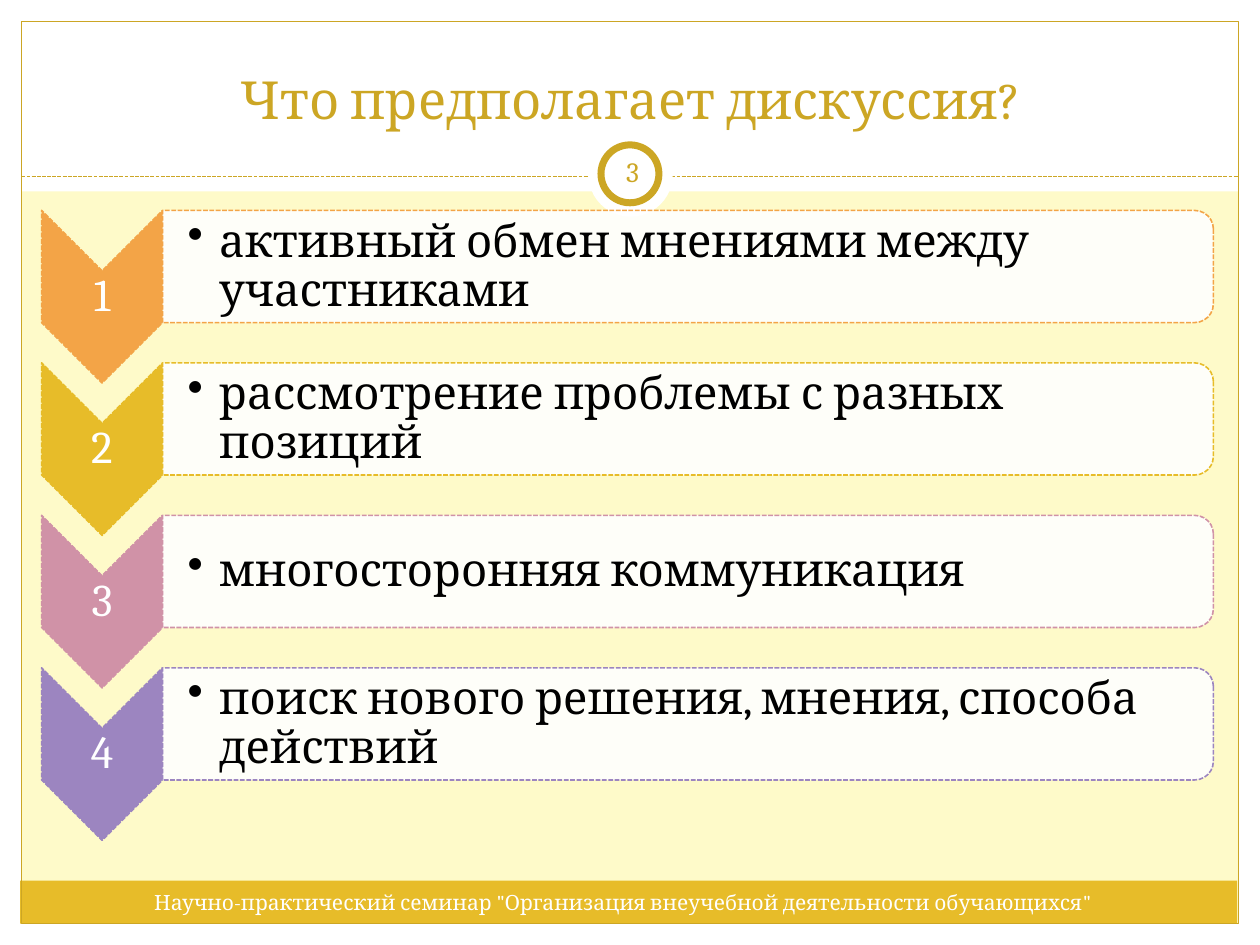
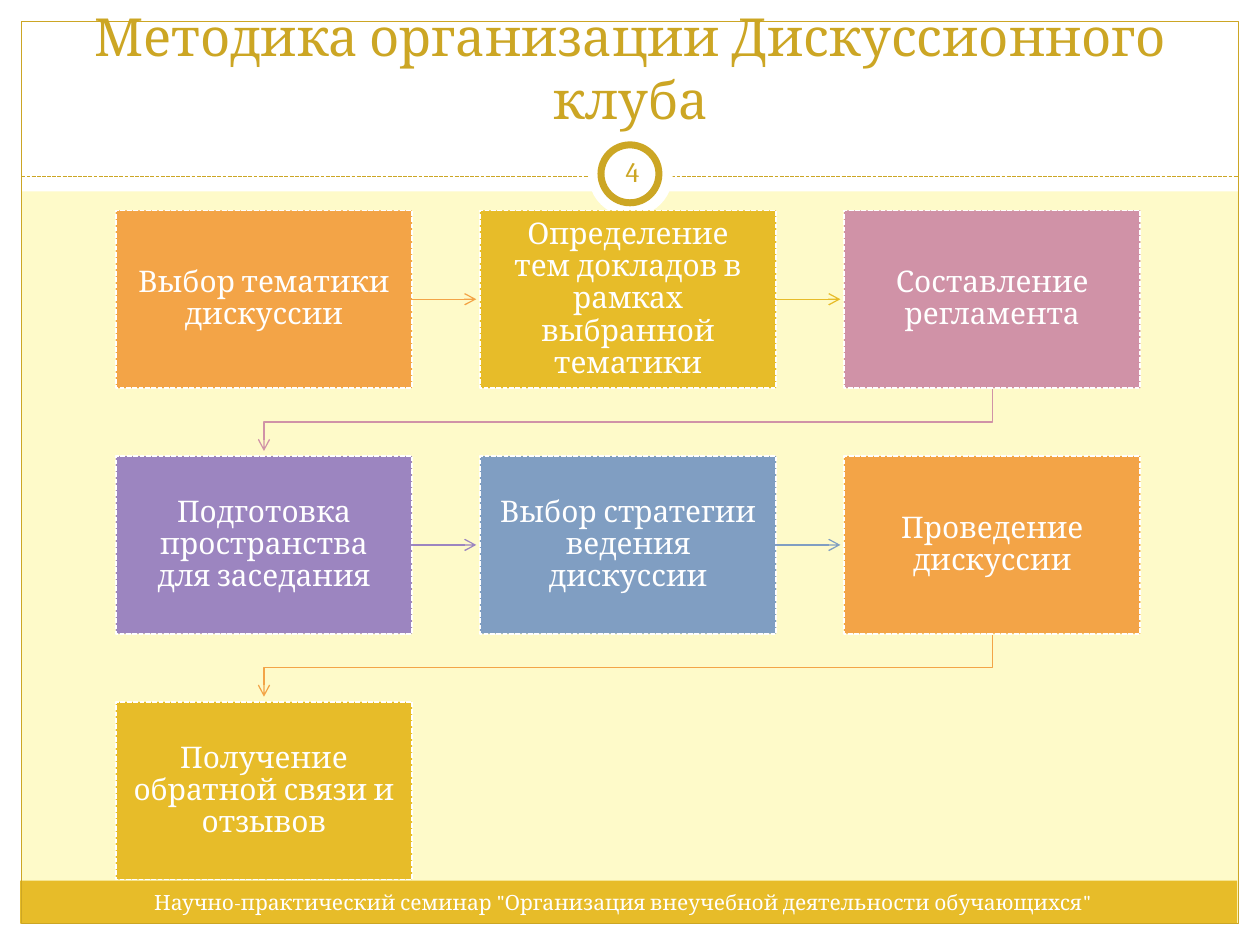
import pptx
import pptx.dml.color
import pptx.enum.dml
import pptx.enum.shapes
import pptx.enum.text
import pptx.oxml
import pptx.oxml.ns
import pptx.util

Inches = pptx.util.Inches
Pt = pptx.util.Pt
RGBColor = pptx.dml.color.RGBColor
Preset = pptx.enum.shapes.MSO_SHAPE
Align = pptx.enum.text.PP_ALIGN
Anchor = pptx.enum.text.MSO_ANCHOR
qn = pptx.oxml.ns.qn

WHITE = RGBColor(0xFF, 0xFF, 0xFF)
BLACK = RGBColor(0, 0, 0)
CREAM = RGBColor(0xFE, 0xFA, 0xC9)
GOLD = RGBColor(0xCC, 0xA6, 0x24)
ORANGE = RGBColor(0xF3, 0xA4, 0x47)
YELLOW = RGBColor(0xE7, 0xBC, 0x29)
PINK = RGBColor(0xD0, 0x92, 0xA7)
VIOLET = RGBColor(0x9C, 0x85, 0xC0)
BLUE = RGBColor(0x80, 0x9E, 0xC2)
ACCENTS = [ORANGE, YELLOW, PINK, VIOLET, BLUE]

FONT = "Cambria"
FOOTER = 'Научно-практический семинар "Организация внеучебной деятельности обучающихся"'
FEATURES = [
    "активный обмен мнениями между участниками",
    "рассмотрение проблемы с разных позиций",
    "многосторонняя коммуникация",
    "поиск нового решения, мнения, способа действий",
]
STEPS = [
    "Выбор тематики дискуссии",
    "Определение тем докладов в рамках выбранной тематики",
    "Составление регламента",
    "Подготовка пространства для заседания",
    "Выбор стратегии ведения дискуссии",
    "Проведение дискуссии",
    "Получение обратной связи и отзывов",
]


def add_xml(parent, tag, **attributes):
    child = pptx.oxml.parse_xml(f"<{tag} {pptx.oxml.ns.nsdecls('a')}/>")
    for name, value in attributes.items():
        child.set(name, value)
    parent.append(child)


def write(shape, text, size, color, align=Align.CENTER, anchor=Anchor.MIDDLE,
          insets=(0.1, 0.05, 0.1, 0.05), spacing=None, bullet=False):
    frame = shape.text_frame
    frame.word_wrap = True
    frame.vertical_anchor = anchor
    (frame.margin_left, frame.margin_top,
     frame.margin_right, frame.margin_bottom) = map(Inches, insets)
    paragraph = frame.paragraphs[0]
    paragraph.alignment = align
    if spacing:
        paragraph.line_spacing = spacing
    if bullet:
        properties = paragraph._p.get_or_add_pPr()
        properties.set("marL", str(Inches(0.25)))
        properties.set("indent", str(-Inches(0.25)))
        add_xml(properties, "a:buChar", char="•")
    run = paragraph.add_run()
    run.text = text
    run.font.name = FONT
    run.font.size = Pt(size)
    run.font.color.rgb = color


class Deck:
    def __init__(self):
        self.presentation = pptx.Presentation()
        self.presentation.slide_width = Inches(10)
        self.presentation.slide_height = Inches(7.5)
        self.slide = None

    def stroke(self, line, color, width, dashed=False):
        line.color.rgb = color
        line.width = Pt(width)
        if dashed:
            line.dash_style = pptx.enum.dml.MSO_LINE.SQUARE_DOT

    def shape(self, preset, left, top, width, height, fill=None, line=None,
              weight=0.9, dashed=False):
        shape = self.slide.shapes.add_shape(
            preset, Inches(left), Inches(top), Inches(width), Inches(height))
        shape.shadow.inherit = False
        if fill is None:
            shape.fill.background()
        else:
            shape.fill.solid()
            shape.fill.fore_color.rgb = fill
        if line is None:
            shape.line.fill.background()
        else:
            self.stroke(shape.line, line, weight, dashed)
        return shape

    def turned(self, preset, left, top, width, height, **style):
        shift = (width - height) / 2
        shape = self.shape(preset, left + shift, top - shift, height, width, **style)
        shape.rotation = 90
        return shape

    def text(self, text, left, top, width, height, **style):
        box = self.slide.shapes.add_textbox(
            Inches(left), Inches(top), Inches(width), Inches(height))
        write(box, text, **style)

    def line(self, start, end, color, dashed=False):
        connector = self.slide.shapes.add_connector(
            pptx.enum.shapes.MSO_CONNECTOR.STRAIGHT, *map(Inches, start + end))
        self.stroke(connector.line, color, 0.75, dashed)
        add_xml(connector.element.spPr, "a:effectLst")
        return connector

    def arrow(self, points, color):
        if len(points) == 2:
            route = self.line(*points, color)
        else:
            corners = [tuple(map(Inches, point)) for point in points]
            builder = self.slide.shapes.build_freeform(*corners[0])
            builder.add_line_segments(corners[1:], close=False)
            route = builder.convert_to_shape()
            route.shadow.inherit = False
            route.fill.background()
            self.stroke(route.line, color, 0.75)
        add_xml(route.element.spPr.find(qn("a:ln")), "a:tailEnd", type="arrow")

    def start_slide(self, title, number):
        self.slide = self.presentation.slides.add_slide(
            self.presentation.slide_layouts[6])
        self.slide.background.fill.solid()
        self.slide.background.fill.fore_color.rgb = CREAM
        for margin in [(0, 7.33, 10, 0.17), (0, 0, 10, 1.52),
                       (0, 0, 0.17, 7.5), (9.83, 0, 0.17, 7.5)]:
            self.shape(Preset.RECTANGLE, *margin, fill=WHITE)
        self.shape(Preset.RECTANGLE, 0.16, 6.99, 9.66, 0.34, fill=YELLOW)
        self.shape(Preset.RECTANGLE, 0.17, 0.17, 9.66, 7.16, line=GOLD, weight=0.75)
        self.line((0.17, 1.4), (9.83, 1.4), GOLD, dashed=True)
        self.shape(Preset.OVAL, 4.67, 1.05, 0.67, 0.67, fill=WHITE)
        self.shape(Preset.OVAL, 4.77, 1.15, 0.46, 0.46, fill=WHITE, line=GOLD, weight=4)
        self.text(title, 0.2, 0.25, 9.61, 0.83, size=30, color=GOLD,
                  anchor=Anchor.BOTTOM)
        self.text(FOOTER, 0.33, 7.01, 9.23, 0.4, size=12, color=WHITE,
                  anchor=Anchor.TOP)
        self.text(str(number), 4.77, 1.12, 0.5, 0.48, size=16, color=GOLD,
                  insets=(0.05,) * 4)

    def feature(self, number, text, top, color):
        self.turned(Preset.CHEVRON, 0.33, top, 0.96, 1.37,
                    fill=color, line=color, dashed=True)
        self.text(str(number), 0.33, top + 0.48, 0.96, 0.41, size=26, color=WHITE,
                  insets=(0.02,) * 4, spacing=0.9)
        panel = self.turned(Preset.ROUND_2_SAME_RECTANGLE, 1.29, top, 8.34, 0.89,
                            fill=WHITE, line=color, dashed=True)
        tint = panel.element.spPr.find(qn("a:solidFill"))[0]
        add_xml(tint, "a:alpha", val="90000")
        self.text(text, 1.29, top + 0.05, 8.3, 0.8, size=26, color=BLACK,
                  align=Align.LEFT, insets=(0.2, 0.02, 0.02, 0.02),
                  spacing=0.9, bullet=True)

    def step(self, text, left, top, width, height, color):
        card = self.shape(Preset.RECTANGLE, left, top, width, height,
                          fill=color, line=WHITE, dashed=True)
        write(card, text, size=17, color=WHITE, insets=(0.13,) * 4, spacing=0.9)


def build_features(deck):
    deck.start_slide("Что предполагает дискуссия?", 3)
    for index, feature in enumerate(FEATURES):
        deck.feature(index + 1, feature, 1.67 + 1.21 * index, ACCENTS[index])


def build_method(deck):
    deck.start_slide("Методика организации Дискуссионного клуба", 4)
    columns, width, height = 3, 2.35, 1.41
    first_left, first_top, column_pitch, row_pitch = 0.92, 1.67, 2.89, 1.95
    for index, step in enumerate(STEPS):
        row, column = divmod(index, columns)
        left = first_left + column * column_pitch
        top = first_top + row * row_pitch
        color = ACCENTS[index % len(ACCENTS)]
        if index < len(STEPS) - 1:
            right, bottom = left + width, top + height
            if column < columns - 1:
                middle = top + height / 2
                route = [(right, middle), (right + 0.51, middle)]
            else:
                center, target = left + width / 2, first_left + width / 2
                route = [(center, bottom), (center, bottom + 0.27),
                         (target, bottom + 0.27), (target, bottom + 0.5)]
            deck.arrow(route, color)
        deck.step(step, left, top, width, height, color)


def main():
    deck = Deck()
    build_features(deck)
    build_method(deck)
    deck.presentation.save("out.pptx")


if __name__ == "__main__":
    main()
